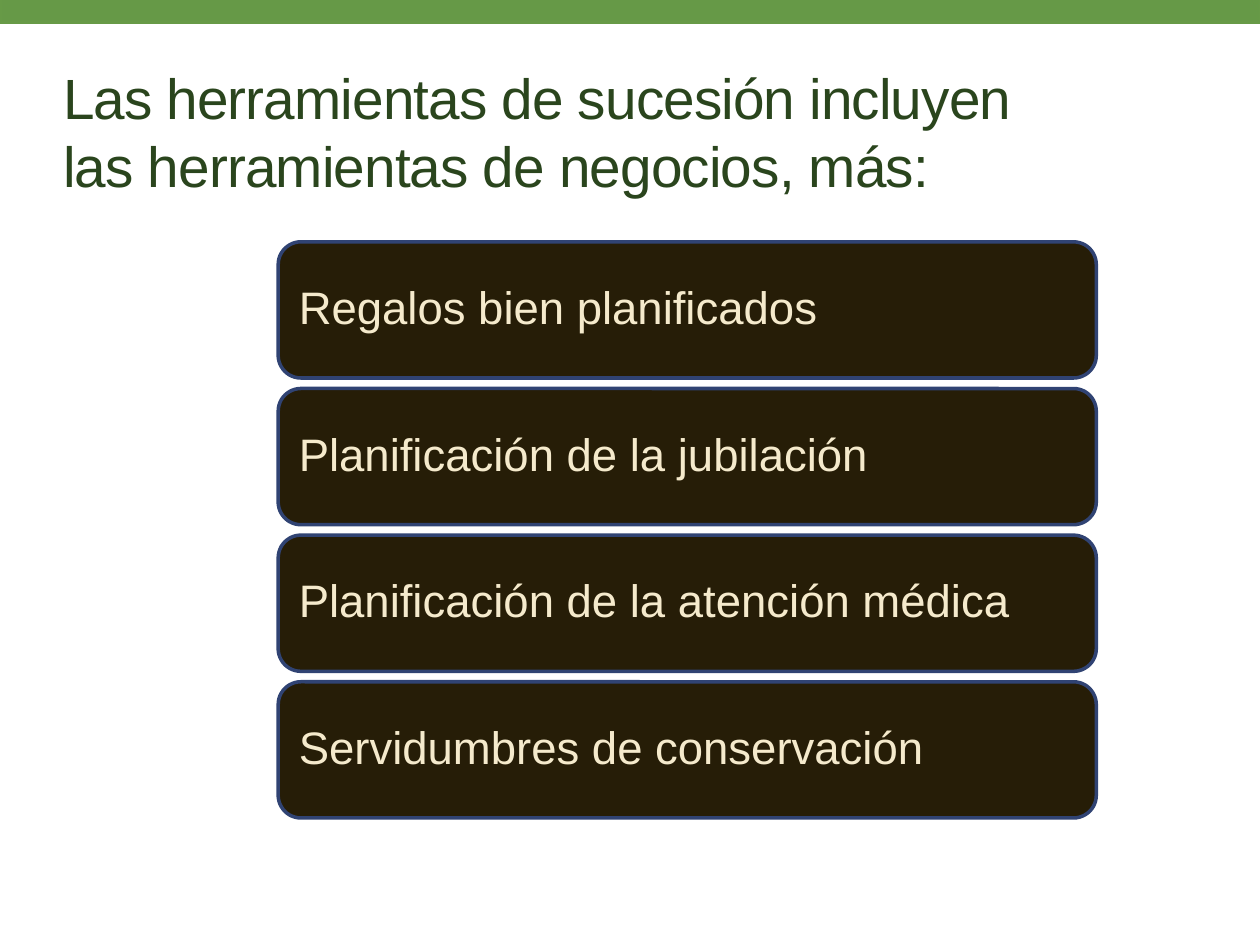
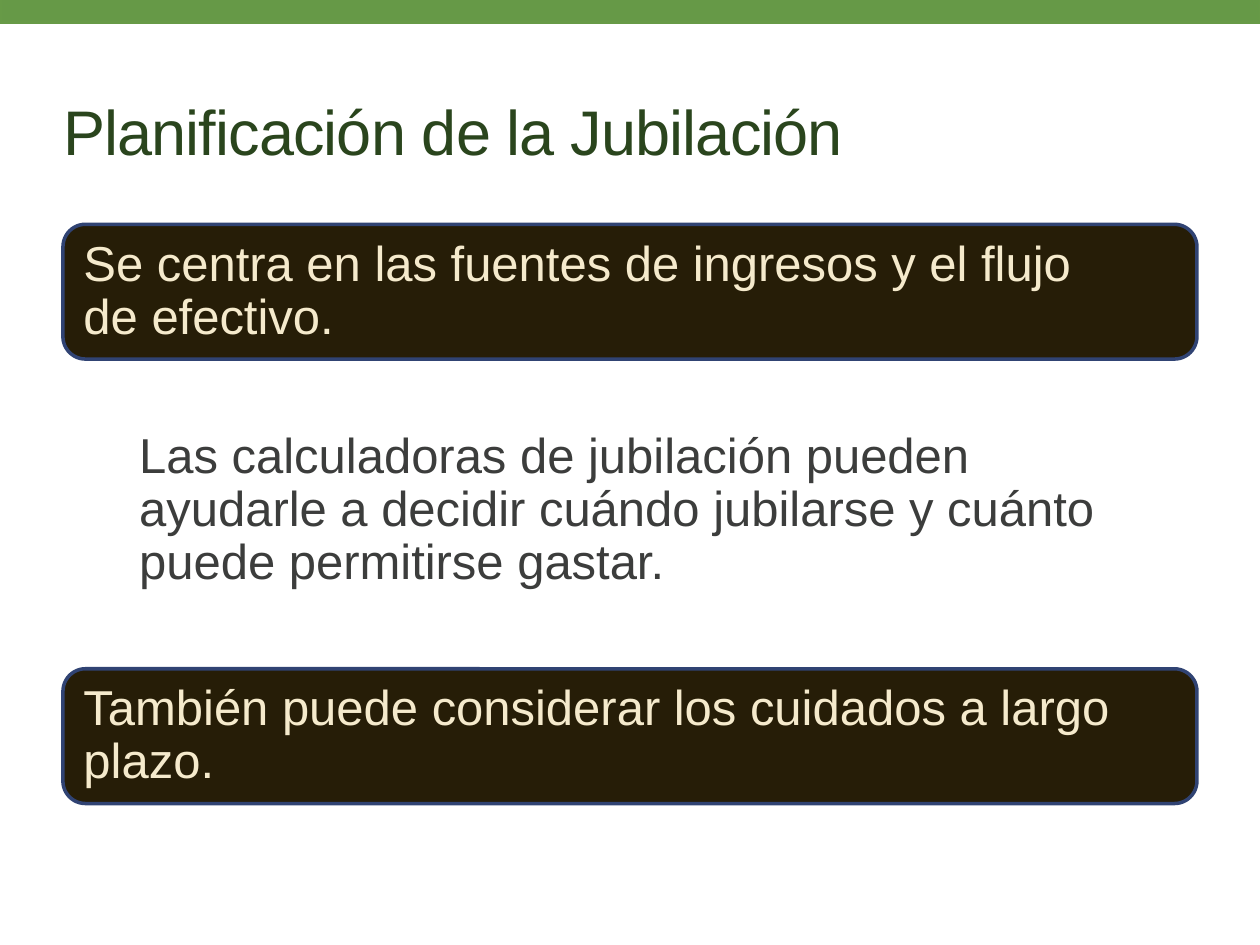
import pptx
import pptx.util
import pptx.dml.color
import pptx.enum.shapes
import pptx.enum.text
from dataclasses import dataclass
from lxml import etree

Pt = pptx.util.Pt
Shape = pptx.enum.shapes.MSO_SHAPE
Align = pptx.enum.text.PP_ALIGN
Anchor = pptx.enum.text.MSO_ANCHOR
Fit = pptx.enum.text.MSO_AUTO_SIZE


@dataclass(frozen=True)
class Theme:
    font: str = "Arial"
    band: str = "669947"
    rim: str = "679A47"
    title: str = "2A451D"
    card: str = "261D07"
    edge: str = "304373"
    cream: str = "F5EACC"
    body: str = "3C3D3C"
    line: float = 2
    small: float = 26
    large: float = 28
    wide: float = 32.4
    head: float = 36


THEME = Theme()


def tint(code):
    return pptx.dml.color.RGBColor.from_string(code)


def fill(frame, text, size, color, inset=(0, 0, 0, 0), anchor=Anchor.MIDDLE):
    """Put one left-aligned paragraph in a text frame and return it."""
    frame.text = text
    frame.word_wrap = True
    frame.auto_size = Fit.NONE
    frame.vertical_anchor = anchor
    (frame.margin_left, frame.margin_top,
     frame.margin_right, frame.margin_bottom) = map(Pt, inset)
    para = frame.paragraphs[0]
    para.alignment = Align.LEFT
    para.space_before = Pt(0)
    for run in para.runs:
        run.font.name = THEME.font
        run.font.size = Pt(size)
        run.font.color.rgb = tint(color)
    return para


def block(slide, kind, box, color, edge):
    shape = slide.shapes.add_shape(kind, *map(Pt, box))
    shape.shadow.inherit = False
    shape.fill.solid()
    shape.fill.fore_color.rgb = tint(color)
    shape.line.color.rgb = tint(edge)
    shape.line.width = Pt(THEME.line)
    return shape


def place(holder, box):
    holder.left, holder.top, holder.width, holder.height = map(Pt, box)


def start(deck, layout, text, size, width):
    """Add a slide with the green band and its title."""
    slide = deck.slides.add_slide(deck.slide_layouts[layout])
    block(slide, Shape.RECTANGLE, (0, -1.5, 720.5, 14.5), THEME.band, THEME.rim)
    title = slide.shapes.title
    place(title, (36, 37.5, width, 74))
    para = fill(title.text_frame, text, size, THEME.title)
    for run in para.runs:
        run.font._element.set("spc", "-50")
    return slide


def card(slide, box, text, size):
    shape = block(slide, Shape.ROUNDED_RECTANGLE, box, THEME.card, THEME.edge)
    para = fill(shape.text_frame, text, size, THEME.cream, (8, 5, 8, 5))
    para.line_spacing = 0.9


def stack(slide, box, items, gap):
    """Fill the box with equal cards, one above the other."""
    left, top, width, height = box
    tall = (height - gap * (len(items) - 1)) / len(items)
    for row, text in enumerate(items):
        card(slide, (left, top + row * (tall + gap), width, tall), text, THEME.small)


def note(slide, box, text):
    """Set the body text, without a bullet, in the box."""
    holder = slide.placeholders[1]
    place(holder, box)
    para = fill(holder.text_frame, text, THEME.large, THEME.body,
                (43.5, 41, 16, 3), Anchor.TOP)
    para.line_spacing = 0.9
    props = para._p.get_or_add_pPr()
    props.set("marL", "0")
    props.set("indent", "0")
    etree.SubElement(props, pptx.oxml.ns.qn("a:buNone"))


def plan(slide, box, first, middle, last):
    """Place a card at each end of the box and the body text between."""
    left, top, width, height = box
    tall = 77
    card(slide, (left, top, width, tall), first, THEME.large)
    note(slide, (left, top + tall, width, height - 2 * tall), middle)
    card(slide, (left, top + height - tall, width, tall), last, THEME.large)


def main():
    deck = pptx.Presentation()
    deck.slide_width, deck.slide_height = Pt(720), Pt(540)

    tools = start(deck, 5, "Las herramientas de sucesión incluyen las "
                  "herramientas de negocios, más:", THEME.wide, 559)
    stack(tools, (159, 138.2, 467.5, 329.2), [
        "Regalos bien planificados",
        "Planificación de la jubilación",
        "Planificación de la atención médica",
        "Servidumbres de conservación",
    ], 6)

    retire = start(deck, 1, "Planificación de la Jubilación", THEME.head, 648)
    plan(retire, (36, 128.2, 648, 331),
         "Se centra en las fuentes de ingresos y el flujo\vde efectivo.",
         "Las calculadoras de jubilación pueden ayudarle a decidir cuándo "
         "jubilarse y cuánto puede permitirse gastar.",
         "También puede considerar los cuidados a largo plazo.")

    deck.save("out.pptx")


if __name__ == "__main__":
    main()
